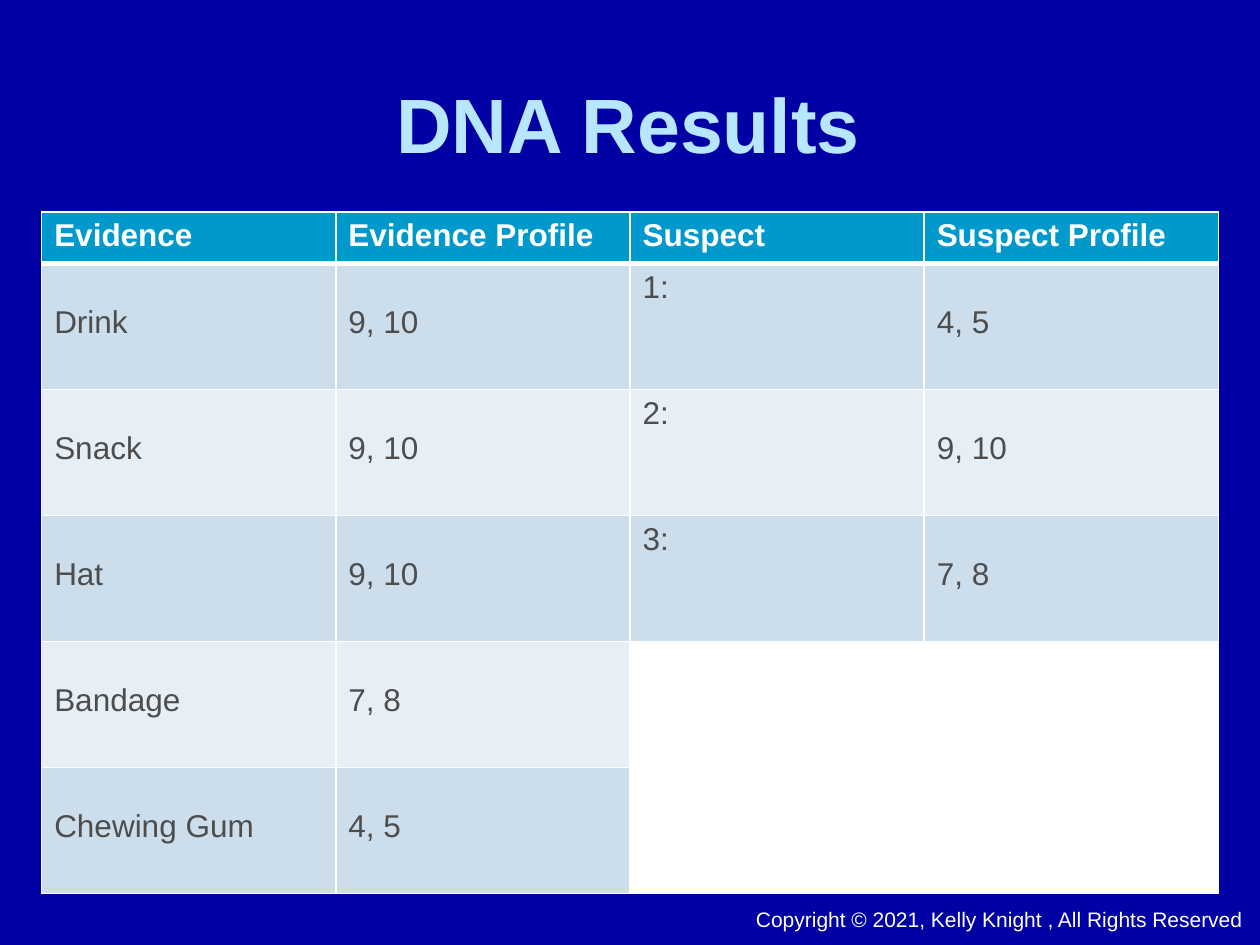
"""Build the DNA results slide with its evidence and suspect table."""
from lxml.etree import SubElement
from pptx import Presentation
from pptx.dml.color import RGBColor
from pptx.enum.text import MSO_ANCHOR, PP_ALIGN
from pptx.oxml.ns import qn
from pptx.util import Cm, Pt


def rgb(color):
    return RGBColor.from_string(color)


def add_text(tf, text, size, color, bold=False):
    p = tf.paragraphs[0]
    r = p.add_run()
    r.text = text
    for name, value in {"name": "Arial", "size": Pt(size), "bold": bold}.items():
        setattr(r.font, name, value)
    r.font.color.rgb = rgb(color)
    return p


prs = Presentation()
prs.slide_width, prs.slide_height = Cm(25.4), Cm(19.05)
s = prs.slides.add_slide(prs.slide_layouts[5])
s.background.fill.solid()
s.background.fill.fore_color.rgb = rgb("0000A4")

title = s.shapes.title
box = {"left": Cm(0.84), "top": Cm(0.64), "width": Cm(23.65), "height": Cm(3.68)}
for name, value in box.items():
    setattr(title, name, value)
title.text_frame.vertical_anchor = MSO_ANCHOR.MIDDLE
p = add_text(title.text_frame, "DNA Results", 44, "B7E7FF", True)
p.alignment = PP_ALIGN.CENTER

rows = [
    ["Evidence", "Evidence Profile", "Suspect", "Suspect Profile"],
    ["Drink", "9, 10", "1:", "4, 5"],
    ["Snack", "9, 10", "2:", "9, 10"],
    ["Hat", "9, 10", "3:", "7, 8"],
    ["Bandage", "7, 8", "", ""],
    ["Chewing Gum", "4, 5", "", ""],
]
table = s.shapes.add_table(6, 4, Cm(0.84), Cm(4.27), Cm(23.72), Cm(13.74)).table
for col in table.columns:
    col.width = Cm(5.93)
for i, row in enumerate(rows):
    header = i == 0
    table.rows[i].height = Cm(1.04 if header else 2.54)
    band = "0099CC" if header else "CCDEEC" if i % 2 else "E7EFF6"
    borders = {"L": 1, "R": 1, "T": 3 if i == 1 else 1, "B": 3 if header else 1}
    for j, text in enumerate(row):
        cell = table.cell(i, j)
        tcPr = cell._tc.get_or_add_tcPr()
        for side, width in borders.items():
            ln = SubElement(tcPr, qn(f"a:ln{side}"), w=str(Pt(width)))
            fill = SubElement(ln, qn("a:solidFill"))
            SubElement(fill, qn("a:srgbClr"), val="FFFFFF")
        cell.fill.solid()
        cell.fill.fore_color.rgb = rgb(band if text else "FFFFFF")
        if text:
            cell.margin_top = Cm(0.13 if header or j == 2 else 0.83)
            add_text(cell.text_frame, text, 18, "FFFFFF" if header else "4D4D4D", header)

tb = s.shapes.add_textbox(Cm(14.99), Cm(18.16), Cm(10.41), Cm(0.76))
tb.text_frame.word_wrap = False
add_text(tb.text_frame, "Copyright © 2021, Kelly Knight , All Rights Reserved", 12, "FFFFFF")

prs.save("out.pptx")
